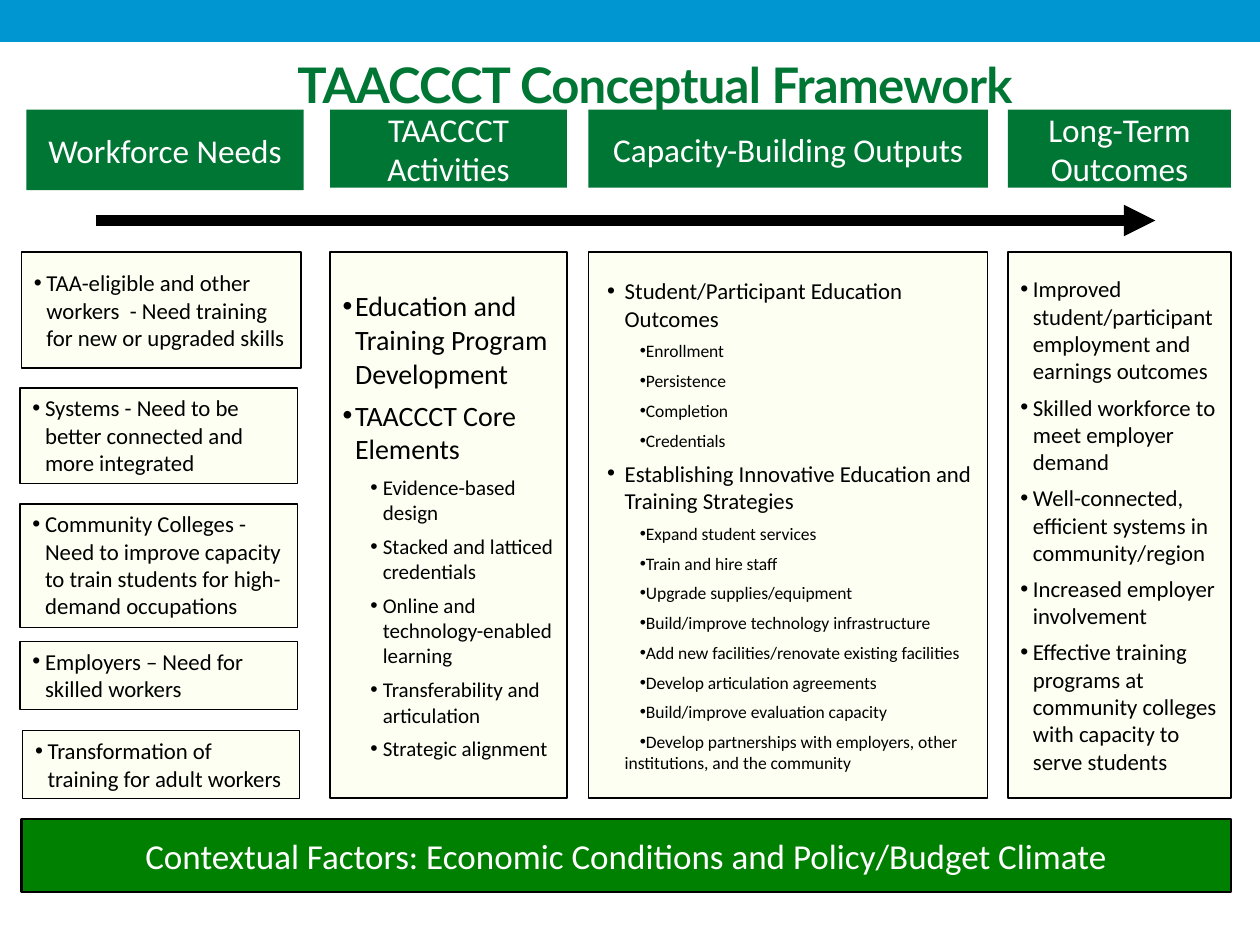
from lxml.etree import SubElement
from pptx import Presentation
from pptx.dml.color import RGBColor
from pptx.enum.shapes import MSO_CONNECTOR, MSO_SHAPE
from pptx.enum.text import MSO_ANCHOR, MSO_AUTO_SIZE, PP_ALIGN
from pptx.oxml.ns import qn
from pptx.util import Pt


def color(value):
    """Turn a hex string into a colour."""
    return RGBColor.from_string(value)


def write(paragraph, text, size, font="Calibri", fill="000000", bold=False,
          align=PP_ALIGN.LEFT, level=0, bullet=None, after=0, spacing=None):
    """Write formatted text, with bullet as an optional (margin, indent) pair."""
    paragraph.alignment = align
    paragraph.level = level
    paragraph.space_after = Pt(after)
    if bullet:
        properties = paragraph._p.get_or_add_pPr()
        margin, indent = bullet
        properties.set("marL", str(Pt(margin)))
        properties.set("indent", str(Pt(indent)))
        SubElement(properties, qn("a:buFont"), typeface="Arial")
        SubElement(properties, qn("a:buChar"), char="•")
    run = paragraph.add_run()
    run.text = text
    run.font.size = Pt(size)
    run.font.name = font
    run.font.bold = bold
    run.font.color.rgb = color(fill)
    if spacing is not None:
        run._r.get_or_add_rPr().set("spc", str(round(spacing * 100)))


class Framework:
    """Hold the slide and the style of its elements."""

    green = "007635"
    cream = "FCFFF2"
    black = "000000"
    white = "FFFFFF"

    def __init__(self, slide):
        """Keep the slide to draw on."""
        self.slide = slide

    def frame(self, shape, anchor, side=7.2, edge=3.6):
        """Set up and return the text frame of a shape."""
        frame = shape.text_frame
        frame.word_wrap = True
        frame.vertical_anchor = anchor
        frame.margin_left = frame.margin_right = Pt(side)
        frame.margin_top = frame.margin_bottom = Pt(edge)
        return frame

    def box(self, left, top, width, height, fill, line=None):
        """Draw a rectangle, outlined when a line width is given."""
        shape = self.slide.shapes.add_shape(
            MSO_SHAPE.RECTANGLE, Pt(left), Pt(top), Pt(width), Pt(height))
        shape.shadow.inherit = False
        shape.fill.solid()
        shape.fill.fore_color.rgb = color(fill)
        if line:
            shape.line.color.rgb = color(self.black)
            shape.line.width = Pt(line)
        else:
            shape.line.fill.background()
        return shape

    def title(self, text, left, top, width, height):
        """Add the slide title."""
        shape = self.slide.shapes.add_textbox(Pt(left), Pt(top), Pt(width), Pt(height))
        frame = self.frame(shape, MSO_ANCHOR.MIDDLE, 0, 0)
        write(frame.paragraphs[0], text, 28, font="Lato", fill=self.green,
              bold=True, align=PP_ALIGN.CENTER, spacing=-0.4)

    def banner(self, text, left, top, width, height, size=19, fill=green, line=None,
               side=12.24, edge=5.76):
        """Add a filled box with a centred white label."""
        shape = self.box(left, top, width, height, fill, line)
        frame = self.frame(shape, MSO_ANCHOR.MIDDLE, side, edge)
        write(frame.paragraphs[0], text, size, fill=self.white, align=PP_ALIGN.CENTER)

    def panel(self, items, left, top, width, height, styles, grow=False):
        """Add a cream box of bullets, each item being a (style name, text) pair."""
        shape = self.box(left, top, width, height, self.cream, 0.75)
        frame = self.frame(shape, MSO_ANCHOR.TOP if grow else MSO_ANCHOR.MIDDLE)
        if grow:
            frame.auto_size = MSO_AUTO_SIZE.SHAPE_TO_FIT_TEXT
        for index, (style, text) in enumerate(items):
            paragraph = frame.add_paragraph() if index else frame.paragraphs[0]
            write(paragraph, text, after=5, **styles[style])

    def arrow(self, left, right, y):
        """Draw the thick horizontal flow arrow."""
        connector = self.slide.shapes.add_connector(
            MSO_CONNECTOR.STRAIGHT, Pt(left), Pt(y), Pt(right), Pt(y))
        connector.line.color.rgb = color(self.black)
        connector.line.width = Pt(6)
        SubElement(connector.line._get_or_add_ln(), qn("a:tailEnd"), type="triangle")
        SubElement(connector._element.spPr, qn("a:effectLst"))


HEADERS = [
    ("Workforce Needs", 15.12, 158.4, 46.08),
    ("TAACCCT Activities", 188.64, 135.36, 44.64),
    ("Capacity-Building Outputs", 336.24, 228.24, 44.64),
    ("Long-Term Outcomes", 576, 127.44, 44.64),
]
NEEDS = [
    ("TAA-eligible and other workers  - Need training for new or upgraded skills",
     12.24, 144, 159.84, 66.24, False),
    ("Systems - Need to be better connected and more integrated",
     11.52, 221.76, 158.4, 54.72, True),
    ("Community Colleges - Need to improve capacity to train students for "
     "high-demand occupations", 11.52, 288, 158.4, 70.56, True),
    ("Employers – Need for skilled workers", 11.52, 366.48, 158.4, 38.88, True),
    ("Transformation of training for adult workers", 12.96, 417.6, 158.4, 38.88, True),
]
ACTIVITIES = [
    ("main", "Education and Training Program Development"),
    ("main", "TAACCCT Core Elements"),
    ("sub", "Evidence-based design"),
    ("sub", "Stacked and latticed credentials"),
    ("sub", "Online and technology-enabled learning"),
    ("sub", "Transferability and articulation"),
    ("sub", "Strategic alignment"),
]
OUTPUTS = [
    ("main", "Student/Participant Education Outcomes"),
    ("sub", "Enrollment"),
    ("sub", "Persistence"),
    ("sub", "Completion"),
    ("sub", "Credentials"),
    ("main", "Establishing Innovative Education and Training Strategies"),
    ("sub", "Expand student services"),
    ("sub", "Train and hire staff"),
    ("sub", "Upgrade supplies/equipment"),
    ("sub", "Build/improve technology infrastructure"),
    ("sub", "Add new facilities/renovate existing facilities"),
    ("sub", "Develop articulation agreements"),
    ("sub", "Build/improve evaluation capacity"),
    ("sub", "Develop partnerships with employers, other institutions, and the community"),
]
OUTCOMES = [
    ("main", "Improved student/participant employment and earnings outcomes"),
    ("main", "Skilled workforce to meet employer demand"),
    ("main", "Well-connected, efficient systems in community/region"),
    ("main", "Increased employer involvement"),
    ("main", "Effective training programs at community colleges with capacity "
             "to serve students"),
]
PLAIN_STYLES = {"main": dict(size=13, bullet=(7.2, -7.2))}
ACTIVITY_STYLES = {
    "main": dict(size=16, bullet=(7.2, -7.2)),
    "sub": dict(size=12, level=2, bullet=(23.04, -7.2)),
}
OUTPUT_STYLES = {
    "main": dict(size=13, bullet=(13.68, -10.08)),
    "sub": dict(size=10, level=1, bullet=(13.68, 8.64)),
}


def main():
    """Build the slide and save it."""
    presentation = Presentation()
    presentation.slide_width = Pt(720)
    presentation.slide_height = Pt(540)
    framework = Framework(presentation.slides.add_slide(presentation.slide_layouts[6]))

    framework.box(0, 0, 720, 24, "0096D2")
    framework.title("TAACCCT Conceptual Framework", 60, 30, 628.5, 36)
    for text, left, width, height in HEADERS:
        framework.banner(text, left, 62.64, width, height)
    for text, left, top, width, height, grow in NEEDS:
        framework.panel([("main", text)], left, top, width, height, PLAIN_STYLES, grow)
    columns = [(ACTIVITIES, ACTIVITY_STYLES), (OUTPUTS, OUTPUT_STYLES),
               (OUTCOMES, PLAIN_STYLES)]
    for (items, styles), (_, left, width, _) in zip(columns, HEADERS[1:]):
        framework.panel(items, left, 144, width, 312, styles)
    framework.arrow(54.72, 660.24, 126)
    framework.banner("Contextual Factors: Economic Conditions and Policy/Budget Climate",
                     12.24, 468, 691.2, 41.76, size=20, fill="008000", line=1.5,
                     side=7.2, edge=3.6)
    presentation.save("out.pptx")


if __name__ == "__main__":
    main()
